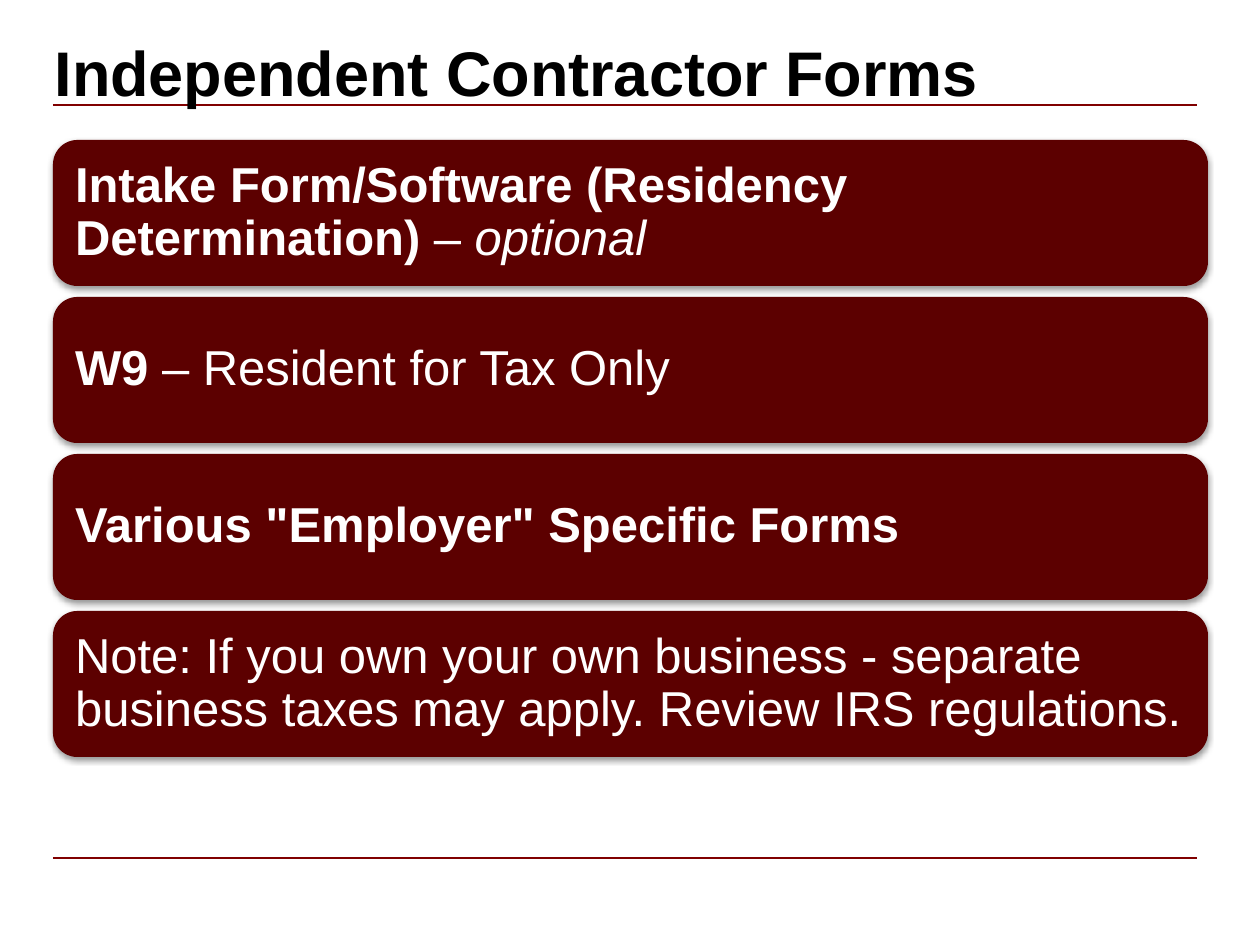
from dataclasses import dataclass

from lxml import etree
from pptx import Presentation
from pptx import util as u
from pptx.dml.color import RGBColor
from pptx.enum import shapes, text
from pptx.oxml.ns import qn

PX = 914400 / 126
FONT = "Arial"
BLACK = RGBColor(0x00, 0x00, 0x00)
WHITE = RGBColor(0xFF, 0xFF, 0xFF)
MAROON = RGBColor(0x80, 0x00, 0x00)
DARK_RED = RGBColor(0x5C, 0x00, 0x00)

LEFT, CARD_TOP, CARD_WIDTH, CARD_HEIGHT, CARD_PITCH = 53, 140, 1155, 146, 157
RULE_RIGHT, RULE_LEVELS = 1197, (105, 858)


@dataclass
class Span:
    words: str
    bold: bool = False
    italic: bool = False


CARDS = [
    [Span("Intake Form/Software (Residency Determination) ", bold=True),
     Span("– "), Span("optional", italic=True)],
    [Span("W9", bold=True), Span(" – Resident for Tax Only")],
    [Span('Various "Employer" Specific Forms', bold=True)],
    [Span("Note: If you own your own business - separate business taxes "
          "may apply. Review IRS regulations.")],
]


def px(length: int) -> u.Emu:
    return u.Emu(round(length * PX))


def add_span(para, words: str, *, size: int, color: RGBColor,
             bold: bool = False, italic: bool = False) -> None:
    span = para.add_run()
    span.text = words
    font = span.font
    font.name, font.size = FONT, u.Pt(size)
    font.bold, font.italic = bold, italic
    font.color.rgb = color


def add_rule(page, y: int):
    rule = page.shapes.add_connector(
        shapes.MSO_CONNECTOR.STRAIGHT, px(LEFT), px(y), px(RULE_RIGHT), px(y))
    rule.line.color.rgb = MAROON
    rule.line.width = u.Pt(0.75)
    etree.SubElement(rule.element.spPr, qn("a:effectLst"))
    return rule


def add_soft_shadow(box) -> None:
    box.shadow.inherit = False
    effects = box.element.spPr.find(qn("a:effectLst"))
    shadow = etree.SubElement(effects, qn("a:outerShdw"), blurRad="40000",
                              dist="20000", dir="5400000", rotWithShape="0")
    color = etree.SubElement(shadow, qn("a:srgbClr"), val=str(BLACK))
    etree.SubElement(color, qn("a:alpha"), val="38000")


def add_card(page, top: int, spans: list[Span]) -> None:
    box = page.shapes.add_shape(
        shapes.MSO_SHAPE.ROUNDED_RECTANGLE,
        px(LEFT), px(top), px(CARD_WIDTH), px(CARD_HEIGHT))
    box.fill.solid()
    box.fill.fore_color.rgb = DARK_RED
    box.line.fill.background()
    add_soft_shadow(box)

    frame = box.text_frame
    frame.word_wrap = True
    frame.vertical_anchor = text.MSO_ANCHOR.MIDDLE
    # The preset's text area is already inset by its rounded corners
    frame.margin_left = frame.margin_right = px(15)
    frame.margin_top = frame.margin_bottom = px(15)
    para = frame.paragraphs[0]
    para.alignment = text.PP_ALIGN.LEFT
    para.line_spacing = 0.9
    for span in spans:
        add_span(para, span.words, size=28, color=WHITE,
                 bold=span.bold, italic=span.italic)


def main() -> None:
    deck = Presentation()
    deck.slide_width, deck.slide_height = u.Inches(10), u.Inches(7.5)
    page = deck.slides.add_slide(deck.slide_layouts[5])

    # Title
    title = page.shapes.title
    title.left, title.top, title.width, title.height = map(px, (42, 42, 1102, 73))
    frame = title.text_frame
    frame.auto_size = text.MSO_AUTO_SIZE.NONE
    frame.vertical_anchor = text.MSO_ANCHOR.BOTTOM
    para = frame.paragraphs[0]
    para.alignment = text.PP_ALIGN.LEFT
    add_span(para, "Independent Contractor Forms", size=36, color=BLACK, bold=True)

    # Rules, kept behind the title
    for y in RULE_LEVELS:
        title.element.addprevious(add_rule(page, y).element)

    # Stack of form cards
    for row, spans in enumerate(CARDS):
        add_card(page, CARD_TOP + row * CARD_PITCH, spans)

    deck.save("out.pptx")


if __name__ == "__main__":
    main()
